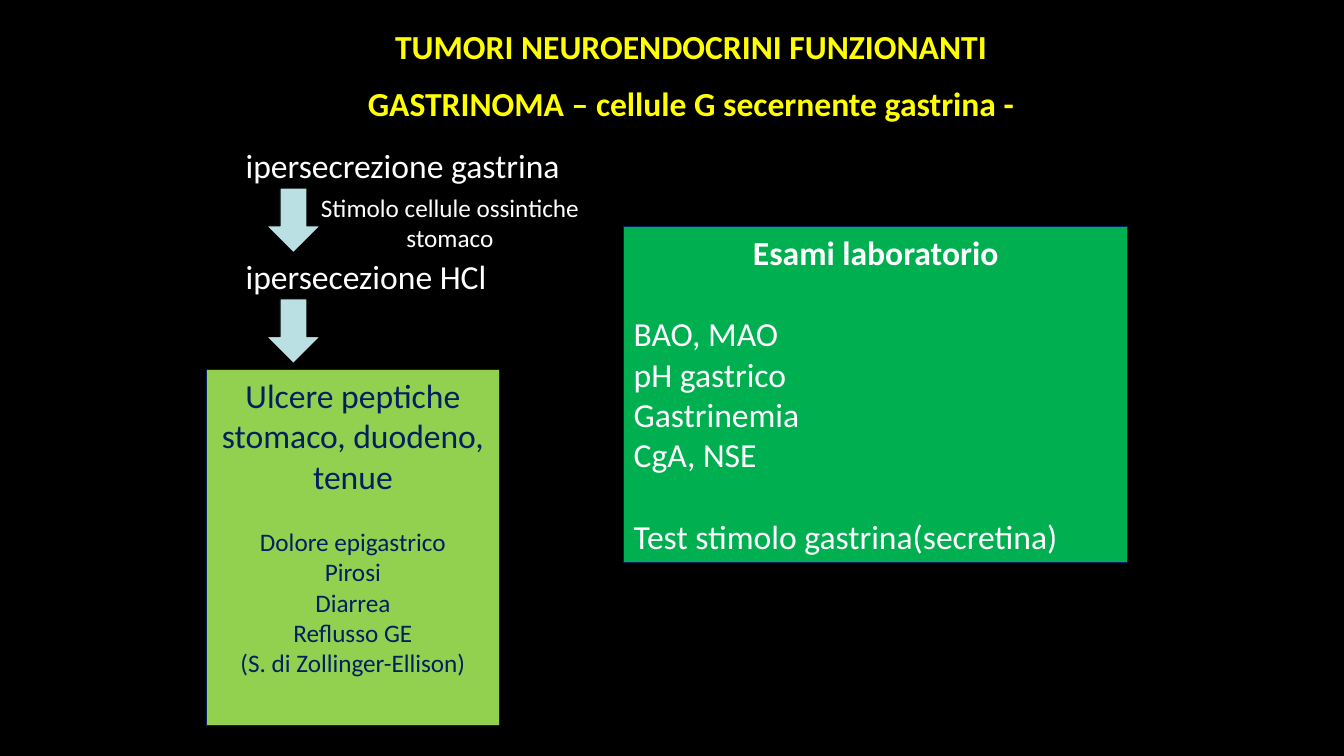
from pptx import Presentation
from pptx.dml.color import RGBColor
from pptx.enum.shapes import MSO_SHAPE
from pptx.enum.text import MSO_ANCHOR, MSO_AUTO_SIZE, PP_ALIGN
from pptx.util import Cm, Pt

RECT, ARROW = MSO_SHAPE.RECTANGLE, MSO_SHAPE.DOWN_ARROW
TOP, FIXED = MSO_ANCHOR.TOP, MSO_AUTO_SIZE.NONE
LEFT, MID = PP_ALIGN.LEFT, PP_ALIGN.CENTER
WHITE, NAVY, YELLOW = "FFFFFF", "002060", "FFFF00"


def paint(color, tone):
    if hasattr(color, "solid"):
        color.solid()
        color = color.fore_color
    color.rgb = RGBColor.from_string(tone)


def write(shape, lines, tone, wrap=True):
    frame = shape.text_frame
    frame.text = "\n".join(line[0] for line in lines)
    for key, val in {"word_wrap": wrap, "auto_size": FIXED, "vertical_anchor": TOP}.items():
        setattr(frame, key, val)
    for para, (text, size, align, bold, gap) in zip(frame.paragraphs, lines):
        para.alignment = align
        para.space_before = Pt(gap)
        look = {"name": "Calibri", "size": Pt(size), "bold": bold}
        for key, val in look.items():
            setattr(para.font, key, val)
        paint(para.font.color, tone)


deck = Presentation()
deck.slide_width, deck.slide_height = Cm(33.87), Cm(19.05)
slide = deck.slides.add_slide(deck.slide_layouts[5])
paint(slide.background.fill, "000000")

title = slide.shapes.title
place = {"left": 8.74, "top": 0.13, "width": 17.35, "height": 3.12}
for key, val in place.items():
    setattr(title, key, Cm(val))
heads = ["TUMORI NEUROENDOCRINI FUNZIONANTI", "GASTRINOMA – cellule G secernente gastrina -"]
write(title, [(text, 24, MID, True, 0) for text in heads], YELLOW)
for para in title.text_frame.paragraphs:
    para.line_spacing = 1.4

labels = [
    ((5.94, 3.53, 8.51, 1.3), ["ipersecrezione gastrina"], 24, LEFT),
    ((7.72, 4.72, 7.24, 1.8), ["Stimolo cellule ossintiche", "stomaco"], 18, MID),
    ((5.94, 6.32, 6.65, 1.3), ["ipersecezione HCl"], 24, LEFT),
]
for area, texts, size, align in labels:
    label = slide.shapes.add_textbox(*map(Cm, area))
    write(label, [(text, size, align, False, 0) for text in texts], WHITE, False)

ulcers = [(text, 24, MID, False, 0) for text in ["Ulcere peptiche", "stomaco, duodeno,", "tenue"]]
signs = ["Dolore epigastrico", "Pirosi", "Diarrea", "Reflusso GE", "(S. di Zollinger-Ellison)"]
ulcers += [(text, 18, MID, False, 0 if row else 22) for row, text in enumerate(signs)]

tests = [("Esami laboratorio", 24, MID, True, 0)]
exams = ["BAO, MAO", "pH gastrico", "Gastrinemia", "CgA, NSE", "Test stimolo gastrina(secretina)"]
tests += [(text, 24, LEFT, False, 29.3 if row in (0, 4) else 0) for row, text in enumerate(exams)]

forms = [
    (ARROW, (6.72, 4.74, 1.35, 1.63), "BBE0E3", "000000", []),
    (ARROW, (6.72, 7.53, 1.35, 1.63), "BBE0E3", "000000", []),
    (RECT, (5.21, 9.32, 7.37, 8.97), "92D050", NAVY, ulcers),
    (RECT, (15.72, 5.72, 12.7, 8.46), "00B050", NAVY, tests),
]
for kind, area, fill, edge, lines in forms:
    form = slide.shapes.add_shape(kind, *map(Cm, area))
    form.shadow.inherit = False
    paint(form.fill, fill)
    paint(form.line.fill, edge)
    form.line.width = Pt(0.75)
    if lines:
        write(form, lines, NAVY if lines is ulcers else WHITE)

deck.save("out.pptx")
